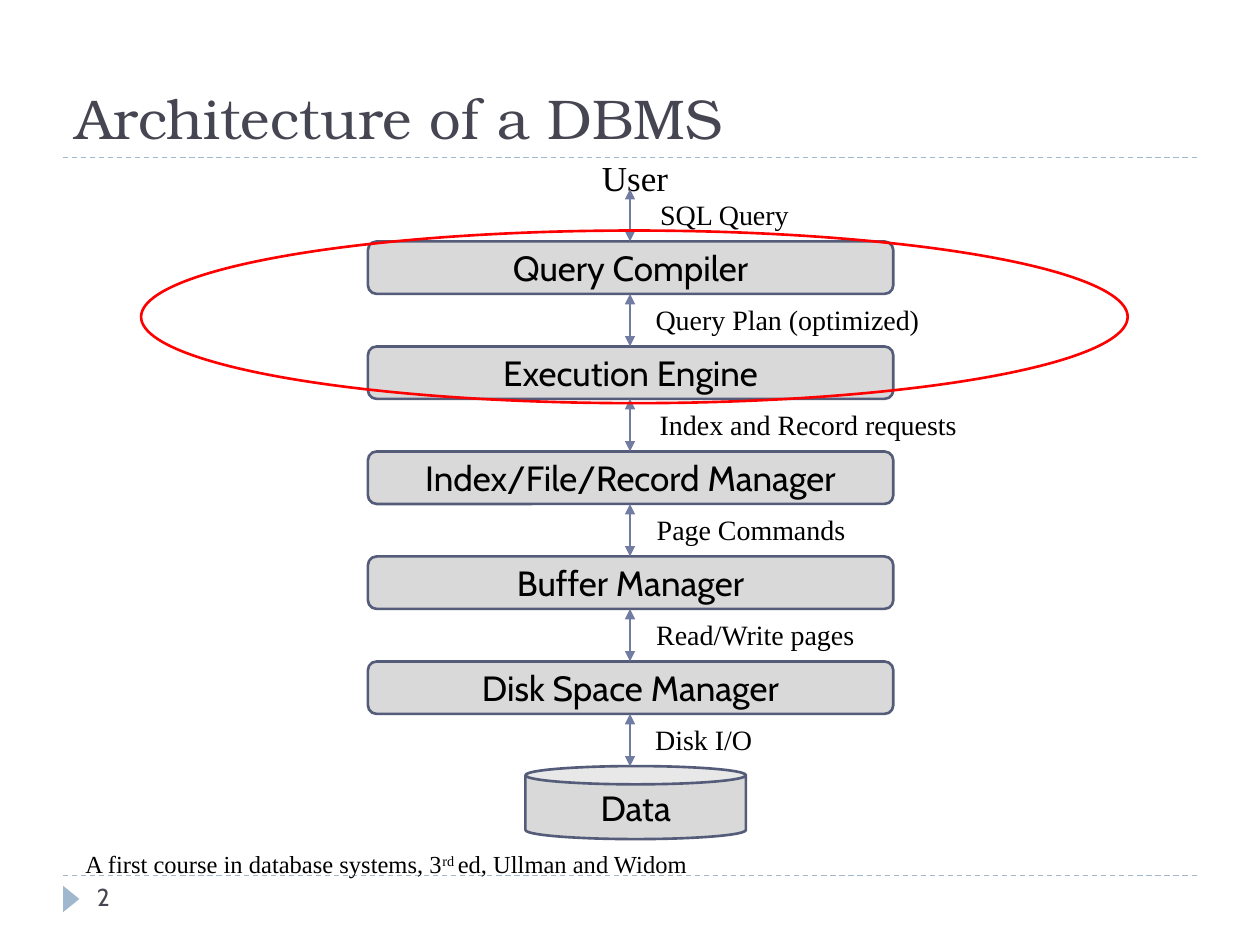
from pptx import Presentation
from pptx.dml.color import RGBColor
from pptx.enum.dml import MSO_LINE
from pptx.enum.shapes import MSO_CONNECTOR, MSO_SHAPE
from pptx.enum.text import MSO_ANCHOR, MSO_AUTO_SIZE, PP_ALIGN
from pptx.oxml.ns import qn
from pptx.util import Inches, Pt
from lxml.etree import SubElement

SERIF, SANS, DISPLAY = "Times New Roman", "Cabin", "TeX Gyre Bonum"
BLACK, SLATE, GREY = "000000", "464653", "D9D9D9"
BORDER, ARROW, ACCENT, RED = "545C79", "727CA3", "9FB8CD", "FF0000"

TITLE = "Architecture of a DBMS"
LAYERS = ["Query Compiler", "Execution Engine", "Index/File/Record Manager",
          "Buffer Manager", "Disk Space Manager"]
# label of each arrow from the top, with the left and width of its box
MESSAGES = [
    ("SQL Query", 5, 1.5),
    ("Query Plan (optimized)", 5, 2.5),
    ("Index and Record requests", 4.83, 3.17),
    ("Page Commands", 5, 1.92),
    ("Read/Write pages", 4.58, 2.83),
    ("Disk I/O", 4.67, 1.83),
]
# text and whether it is raised
CITATION = [("A first course in database systems, 3", False), ("rd ", True),
            ("ed, Ullman and Widom", False)]

FIRST_ARROW = 1.5
LAYER_HEIGHT = ARROW_LENGTH = 5 / 12
PITCH = LAYER_HEIGHT + ARROW_LENGTH
CENTER = 5


def color(value):
    return RGBColor.from_string(value)


def inches(*lengths):
    return [Inches(length) for length in lengths]


def add_span(para, text, size, font, ink):
    span = para.add_run()
    span.text = text
    span.font.size, span.font.name = Pt(size), font
    span.font.color.rgb = color(ink)
    return span


def add_text(slide, at, text, size, font=SERIF, ink=BLACK, align=PP_ALIGN.CENTER, top=0.07):
    frame = slide.shapes.add_textbox(*inches(*at)).text_frame
    frame.word_wrap = True
    frame.margin_top = Inches(top)
    para = frame.paragraphs[0]
    para.alignment = align
    if text:
        add_span(para, text, size, font, ink)
    return para


def add_figure(slide, kind, at, fill=None, line=None, text=None):
    shape = slide.shapes.add_shape(kind, *inches(*at))
    shape.shadow.inherit = False
    if fill:
        shape.fill.solid()
        shape.fill.fore_color.rgb = color(fill)
    else:
        shape.fill.background()
    if line:
        shape.line.color.rgb = color(line)
        shape.line.width = Pt(1.5)
    else:
        shape.line.fill.background()
    if text:
        frame = shape.text_frame
        frame.vertical_anchor = MSO_ANCHOR.MIDDLE
        para = frame.paragraphs[0]
        para.alignment = PP_ALIGN.CENTER
        add_span(para, text, 20, SANS, BLACK)
    return shape


def add_line(slide, start, end, ink):
    line = slide.shapes.add_connector(MSO_CONNECTOR.STRAIGHT, *inches(*start, *end))
    line.line.color.rgb = color(ink)
    line.line.width = Pt(0.75)
    SubElement(line._element.spPr, qn("a:effectLst"))
    return line


def add_double_arrow(slide, top):
    arrow = add_line(slide, (CENTER, top), (CENTER, top + ARROW_LENGTH), ARROW)
    for end in ("a:headEnd", "a:tailEnd"):
        SubElement(arrow.line._get_or_add_ln(), qn(end), type="triangle")


def add_frame(slide):
    """Title, dashed rules and page marker."""
    for y in (6.95, 1.25):
        add_line(slide, (0.5, y), (9.5, y), ACCENT).line.dash_style = MSO_LINE.DASH
    marker = add_figure(slide, MSO_SHAPE.ISOSCELES_TRIANGLE, (0.46, 7.07, 0.21, 0.13), ACCENT)
    marker.rotation = 90
    title = slide.shapes.title
    title.left, title.top, title.width, title.height = inches(0.5, 0.17, 9, 1.08)
    frame = title.text_frame
    frame.auto_size = MSO_AUTO_SIZE.NONE
    frame.vertical_anchor = MSO_ANCHOR.BOTTOM
    para = frame.paragraphs[0]
    para.alignment = PP_ALIGN.LEFT
    add_span(para, TITLE, 32, DISPLAY, SLATE)
    add_text(slide, (0.67, 6.95, 2.17, 0.4), "2", 14, SANS, SLATE, PP_ALIGN.LEFT, 0.05)


def add_stack(slide):
    """Layers from user to data, joined by labelled arrows."""
    add_text(slide, (0.58, 1.17, 8.92, 0.33), "User", 20)
    for row, layer in enumerate(LAYERS):
        top = FIRST_ARROW + ARROW_LENGTH + row * PITCH
        add_figure(slide, MSO_SHAPE.ROUNDED_RECTANGLE, (2.92, top, 4.17, LAYER_HEIGHT),
                   GREY, BORDER, layer)
    add_figure(slide, MSO_SHAPE.CAN, (4.17, 6.08, 1.75, 0.58), GREY, BORDER, "Data")
    for row, (message, left, width) in enumerate(MESSAGES):
        top = FIRST_ARROW + row * PITCH
        add_double_arrow(slide, top)
        add_text(slide, (left, top, width, 0.33), message, 16)
    add_figure(slide, MSO_SHAPE.OVAL, (1.12, 1.83, 7.83, 1.37), line=RED)


def add_citation(slide):
    para = add_text(slide, (0.58, 6.67, 8.92, 0.33), None, 14, align=PP_ALIGN.LEFT)
    for text, raised in CITATION:
        span = add_span(para, text, 14, SERIF, BLACK)
        if raised:
            span.font._element.set("baseline", "30000")


def main():
    deck = Presentation()
    deck.slide_width, deck.slide_height = inches(10, 7.5)
    slide = deck.slides.add_slide(deck.slide_layouts[5])
    add_frame(slide)
    add_citation(slide)
    add_stack(slide)
    deck.save("out.pptx")


if __name__ == "__main__":
    main()
